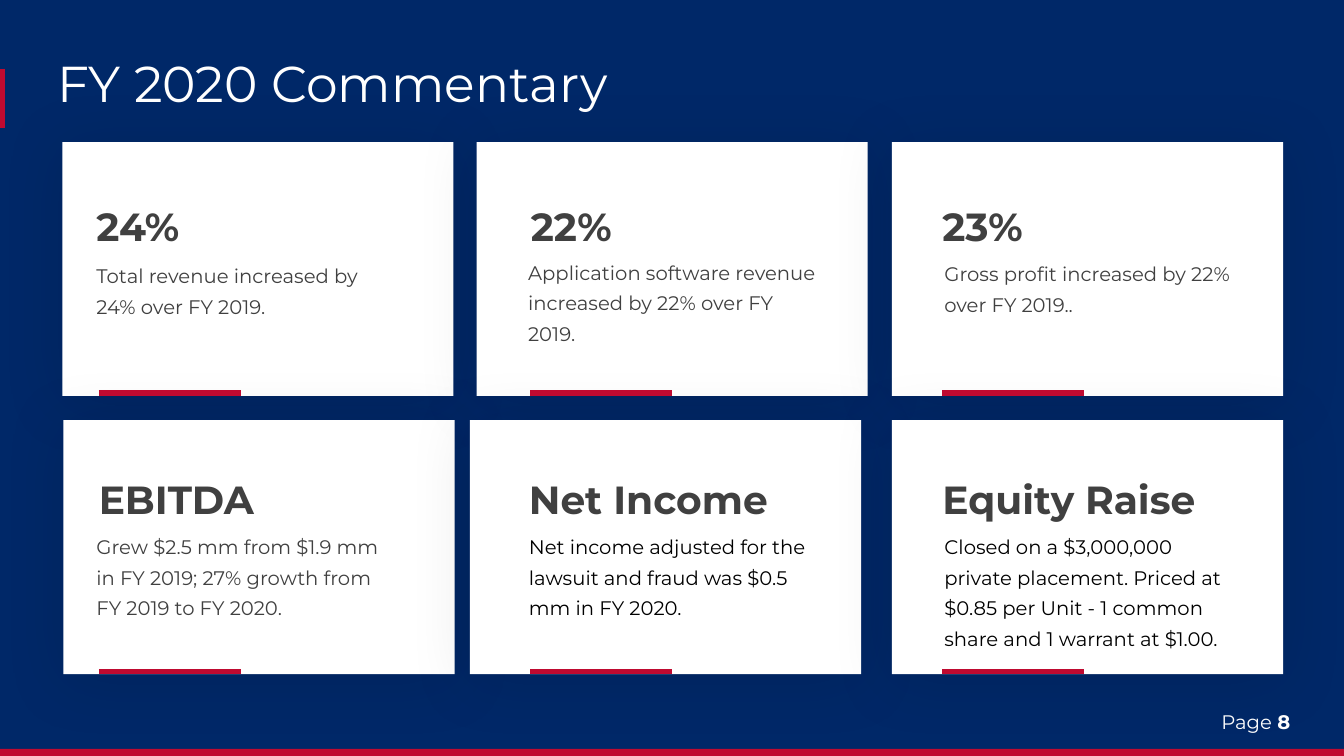
from dataclasses import dataclass

from lxml.etree import SubElement
from pptx import Presentation
from pptx.dml.color import RGBColor
from pptx.enum.shapes import MSO_CONNECTOR as Connector, MSO_SHAPE as Shape
from pptx.enum.text import MSO_ANCHOR as Anchor
from pptx.oxml.ns import qn
from pptx.util import Cm, Pt

NAVY, RED, WHITE, GREY, BLACK = "002868", "BF0A30", "FFFFFF", "404040", "000000"
FONT = "Montserrat"
CARD_WIDTH, CARD_HEIGHT = 9.86, 6.4
ACCENT_LENGTH, ACCENT_DROP = 3.58, 6.33
HEADING_DROPS = {3.58: 1.04, 10.59: 0.92}
TOP_ROW, BOTTOM_ROW = HEADING_DROPS


@dataclass
class Card:
    """Place and wording of one commentary card, in centimetres."""
    left: float
    top: float
    accent_left: float
    heading: str
    heading_left: float
    body: str
    body_left: float
    body_top: float
    body_width: float = 7.75
    body_color: str = GREY


CARDS = [
    Card(1.57, TOP_ROW, 2.49, "24%", 2.18,
         "Total revenue increased by 24% over FY 2019.", 2.18, 6.35, 8.03),
    Card(1.6, BOTTOM_ROW, 2.49, "EBITDA", 2.24,
         "Grew $2.5 mm from $1.9 mm in FY 2019; 27% growth from FY 2019 to FY 2020.",
         2.18, 13.18),
    Card(12.01, TOP_ROW, 13.36, "22%", 13.13,
         "Application software revenue increased by 22% over FY 2019.", 13.06, 6.27),
    Card(11.84, BOTTOM_ROW, 13.36, "Net Income", 13.08,
         "Net income adjusted for the lawsuit and fraud was $0.5 mm in FY 2020.",
         13.08, 13.18, body_color=BLACK),
    Card(22.48, TOP_ROW, 23.75, "23%", 23.5,
         "Gross profit increased by 22% over FY 2019..", 23.55, 6.3),
    Card(22.48, BOTTOM_ROW, 23.75, "Equity Raise", 23.5,
         "Closed on a $3,000,000 private placement. Priced at $0.85 per Unit"
         " - 1 common share and 1 warrant at $1.00.", 23.55, 13.18, body_color=BLACK),
]


def paint(color_format, color):
    """Give a fill or font colour a hex value."""
    color_format.rgb = RGBColor.from_string(color)


def add_text(slide, text, left, top, width, height, size=14, color=WHITE, bold=False,
             bold_tail="", spacing=1.0, anchor=Anchor.TOP):
    """Add a one-paragraph text box, with an optional bold ending."""
    frame = slide.shapes.add_textbox(Cm(left), Cm(top), Cm(width), Cm(height)).text_frame
    frame.word_wrap = True
    frame.vertical_anchor = anchor
    paragraph = frame.paragraphs[0]
    paragraph.line_spacing = spacing
    for words, is_bold in ((text, bold), (bold_tail, True)):
        if words:
            run = paragraph.add_run()
            run.text = words
            run.font.name, run.font.size, run.font.bold = FONT, Pt(size), is_bold
            paint(run.font.color, color)


def add_rectangle(slide, left, top, width, height, color):
    """Add a flat rectangle without an outline."""
    shape = slide.shapes.add_shape(Shape.RECTANGLE, Cm(left), Cm(top), Cm(width), Cm(height))
    shape.shadow.inherit = False
    shape.fill.solid()
    paint(shape.fill.fore_color, color)
    shape.line.fill.background()
    return shape


def add_soft_shadow(shape):
    """Give a shape a wide, faint shadow that falls downwards."""
    effects = shape.element.spPr.find(qn("a:effectLst"))
    shadow = SubElement(effects, qn("a:outerShdw"), blurRad=str(Pt(46)), dist=str(Pt(4)),
                        dir="5400000", algn="t", rotWithShape="0")
    color = SubElement(shadow, qn("a:srgbClr"), val=BLACK)
    SubElement(color, qn("a:alpha"), val="11000")


def add_accent(slide, left, top, right, bottom):
    """Add a thick red line."""
    line = slide.shapes.add_connector(Connector.STRAIGHT, Cm(left), Cm(top), Cm(right), Cm(bottom))
    line.line.width = Pt(4)
    paint(line.line.color, RED)
    SubElement(line.element.spPr, qn("a:effectLst"))


def add_card_text(slide, card):
    """Add the accent, heading and body of a card."""
    accent_top = card.top + ACCENT_DROP
    add_accent(slide, card.accent_left, accent_top, card.accent_left + ACCENT_LENGTH, accent_top)
    add_text(slide, card.heading, card.heading_left, card.top + HEADING_DROPS[card.top],
             8.4, 1.68, size=28, color=GREY, bold=True, spacing=1.3)
    add_text(slide, card.body, card.body_left, card.body_top, card.body_width, 2.5,
             color=card.body_color, spacing=1.3)


def main():
    """Build the commentary slide."""
    presentation = Presentation()
    presentation.slide_width, presentation.slide_height = Cm(33.87), Cm(19.05)
    slide = presentation.slides.add_slide(presentation.slide_layouts[6])
    slide.background.fill.solid()
    paint(slide.background.fill.fore_color, NAVY)

    add_rectangle(slide, 0, 18.87, 33.87, 0.18, RED)
    add_text(slide, "Page ", 30.53, 17.45, 3.3, 1.47, bold_tail="8", anchor=Anchor.MIDDLE)
    add_accent(slide, 0.05, 1.73, 0.05, 3.23)
    add_text(slide, "FY 2020 Commentary", 1.19, 1.35, 31.5, 1.65, size=36, spacing=0.9,
             anchor=Anchor.MIDDLE)
    for card in CARDS:
        add_soft_shadow(add_rectangle(slide, card.left, card.top, CARD_WIDTH, CARD_HEIGHT, WHITE))
    for card in CARDS:
        add_card_text(slide, card)
    presentation.save("out.pptx")


if __name__ == "__main__":
    main()
